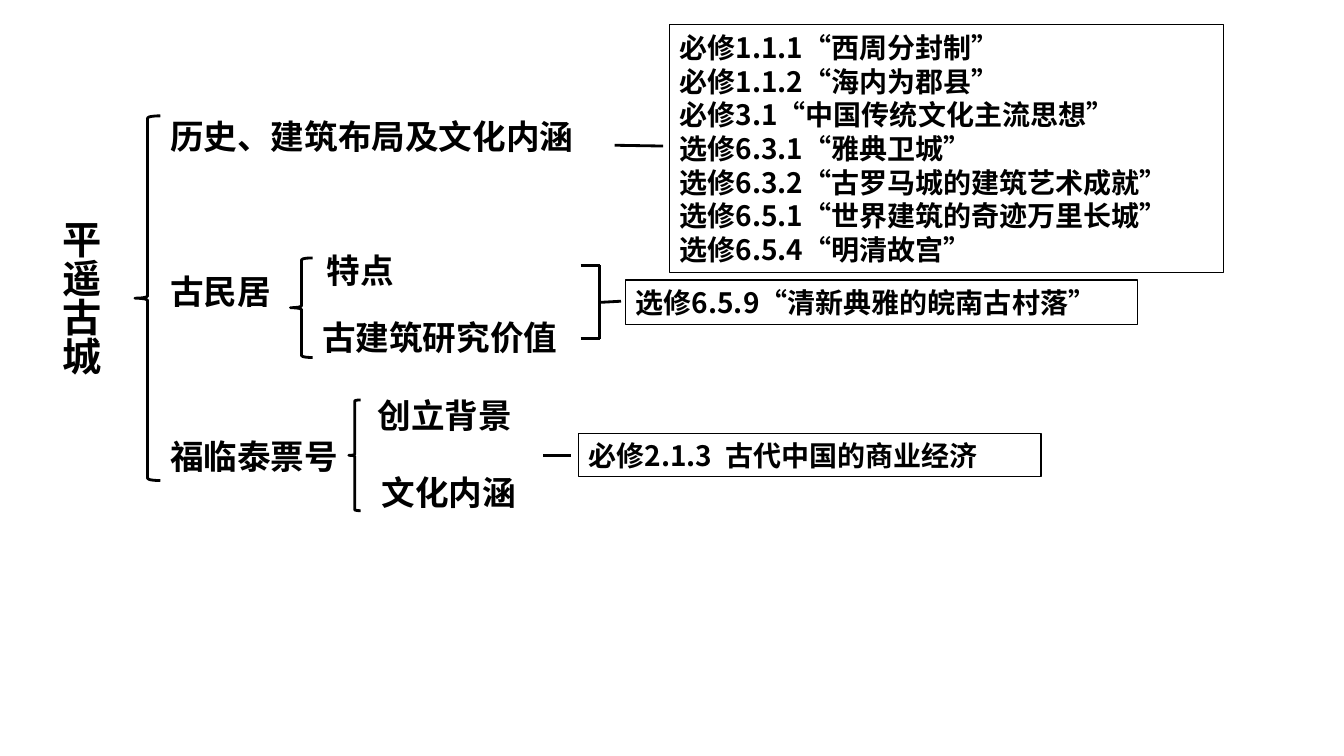
from dataclasses import dataclass

from lxml.etree import SubElement
from pptx import Presentation
from pptx.dml.color import RGBColor
from pptx.enum.lang import MSO_LANGUAGE_ID as Lang
from pptx.enum.shapes import MSO_CONNECTOR as Connector, MSO_SHAPE as Preset
from pptx.enum.text import MSO_ANCHOR as Anchor, MSO_AUTO_SIZE as AutoSize, PP_ALIGN as Align
from pptx.oxml.ns import qn
from pptx.util import Cm, Pt


@dataclass(frozen=True)
class Theme:
    ink: RGBColor = RGBColor(0, 0, 0)
    paper: RGBColor = RGBColor(255, 255, 255)
    font: str = "Noto Sans CJK SC"
    title_size: int = 28
    topic_size: int = 24
    lesson_size: int = 20
    branch_width: float = 2
    frame_width: float = 1
    brace_curve: float = 0.083


@dataclass(frozen=True)
class Area:
    left: float
    top: float
    width: float
    height: float

    def lengths(self) -> tuple[Cm, Cm, Cm, Cm]:
        return Cm(self.left), Cm(self.top), Cm(self.width), Cm(self.height)


@dataclass(frozen=True)
class Label:
    text: str
    area: Area


@dataclass(frozen=True)
class Link:
    x1: float
    y1: float
    x2: float
    y2: float


THEME = Theme()

# Content: all lengths in centimetres
CITY = Label("平遥古城", Area(1.19, 5.41, 1.7, 5.44))
TOPIC_LEFT, TOPIC_HEIGHT = 4.04, 1.27
TOPICS = [
    Label("历史、建筑布局及文化内涵", Area(TOPIC_LEFT, 2.79, 11.81, TOPIC_HEIGHT)),
    Label("古民居", Area(TOPIC_LEFT, 6.71, 3.84, TOPIC_HEIGHT)),
    Label("福临泰票号", Area(TOPIC_LEFT, 10.85, 9.02, TOPIC_HEIGHT)),
    Label("特点", Area(7.98, 6.17, 3.4, TOPIC_HEIGHT)),
    Label("古建筑研究价值", Area(7.87, 7.85, 6.76, TOPIC_HEIGHT)),
    Label("创立背景", Area(9.27, 9.83, 3.91, TOPIC_HEIGHT)),
    Label("文化内涵", Area(9.37, 11.76, 4.34, TOPIC_HEIGHT)),
]
BRACES = [
    Area(3.4, 2.92, 0.64, 9.19),
    Area(7.32, 6.5, 0.56, 2.51),
    Area(8.79, 10.08, 0.3, 2.79),
]
HISTORY_AREA = Area(16.87, 0.61, 13.97, 6.25)
HISTORY_LESSONS = [
    "必修1.1.1“西周分封制”",
    "必修1.1.2“海内为郡县”",
    "必修3.1“中国传统文化主流思想”",
    "选修6.3.1“雅典卫城”",
    "选修6.3.2“古罗马城的建筑艺术成就”",
    "选修6.5.1“世界建筑的奇迹万里长城”",
    "选修6.5.4“明清故宫”",
]
LESSONS = [
    Label("选修6.5.9“清新典雅的皖南古村落”", Area(15.77, 7.06, 12.9, 1.12)),
    Label("必修2.1.3  古代中国的商业经济", Area(14.58, 10.92, 11.66, 1.09)),
]
BRACKET_LEFT, BRACKET_RIGHT, BRACKET_TOP, BRACKET_BOTTOM = 14.63, 15.11, 6.68, 8.53
LINKS = [
    Link(15.49, 3.66, 16.71, 3.68),
    Link(13.69, 11.48, 14.38, 11.48),
    Link(BRACKET_RIGHT, 7.62, 15.65, 7.59),
    Link(BRACKET_LEFT, BRACKET_TOP, BRACKET_RIGHT, BRACKET_TOP),
    Link(BRACKET_LEFT, BRACKET_BOTTOM, BRACKET_RIGHT, BRACKET_BOTTOM),
    Link(BRACKET_RIGHT, BRACKET_TOP, BRACKET_RIGHT, BRACKET_BOTTOM),
]


def place(shape, area: Area) -> None:
    shape.left, shape.top, shape.width, shape.height = area.lengths()


def write(shape, lines: list[str], size: int, anchor: Anchor = Anchor.TOP) -> None:
    frame = shape.text_frame
    frame.auto_size = AutoSize.NONE
    frame.word_wrap = True
    frame.vertical_anchor = anchor
    for index, line in enumerate(lines):
        paragraph = frame.add_paragraph() if index else frame.paragraphs[0]
        paragraph.alignment = Align.LEFT
        paragraph.space_before = Pt(0)
        run = paragraph.add_run()
        run.text = line
        font = run.font
        font.size, font.bold, font.name = Pt(size), True, THEME.font
        font.color.rgb = THEME.ink
        font.language_id = Lang.SIMPLIFIED_CHINESE
        SubElement(run._r.get_or_add_rPr(), qn("a:ea"), typeface=THEME.font)


def outline(shape, width: float) -> None:
    shape.fill.background()
    shape.line.color.rgb = THEME.ink
    shape.line.width = Pt(width)


def draw_title(slide, label: Label) -> None:
    title = slide.shapes.title
    place(title, label.area)
    write(title, [label.text], THEME.title_size)
    title.element.find(".//" + qn("a:bodyPr")).set("vert", "eaVert")


def draw_lesson_list(slide, lessons: list[str], area: Area) -> None:
    body = slide.placeholders[1]
    place(body, area)
    outline(body, THEME.frame_width)
    write(body, lessons, THEME.lesson_size, Anchor.MIDDLE)
    for paragraph in body.text_frame.paragraphs:
        properties = paragraph._p.get_or_add_pPr()
        properties.set("marL", "0")
        properties.set("indent", "0")
        SubElement(properties, qn("a:buNone"))


def draw_topic(slide, label: Label) -> None:
    write(slide.shapes.add_textbox(*label.area.lengths()), [label.text], THEME.topic_size)


def draw_lesson(slide, label: Label) -> None:
    frame = slide.shapes.add_shape(Preset.RECTANGLE, *label.area.lengths())
    frame.shadow.inherit = False
    outline(frame, THEME.frame_width)
    write(frame, [label.text], THEME.lesson_size, Anchor.MIDDLE)


def draw_brace(slide, area: Area) -> None:
    brace = slide.shapes.add_shape(Preset.LEFT_BRACE, *area.lengths())
    brace.shadow.inherit = False
    brace.adjustments[0] = THEME.brace_curve
    outline(brace, THEME.branch_width)


def draw_link(slide, link: Link) -> None:
    line = slide.shapes.add_connector(
        Connector.STRAIGHT, Cm(link.x1), Cm(link.y1), Cm(link.x2), Cm(link.y2))
    line.line.color.rgb = THEME.ink
    line.line.width = Pt(THEME.branch_width)
    SubElement(line.element.spPr, qn("a:effectLst"))


def main() -> None:
    deck = Presentation()
    deck.slide_width, deck.slide_height = Cm(33.87), Cm(19.05)
    slide = deck.slides.add_slide(deck.slide_layouts[1])
    slide.background.fill.solid()
    slide.background.fill.fore_color.rgb = THEME.paper

    # City and its branches
    draw_title(slide, CITY)
    for brace in BRACES:
        draw_brace(slide, brace)
    for topic in TOPICS:
        draw_topic(slide, topic)

    # Textbook lessons tied to each branch
    draw_lesson_list(slide, HISTORY_LESSONS, HISTORY_AREA)
    for lesson in LESSONS:
        draw_lesson(slide, lesson)
    for link in LINKS:
        draw_link(slide, link)

    deck.save("out.pptx")


if __name__ == "__main__":
    main()
